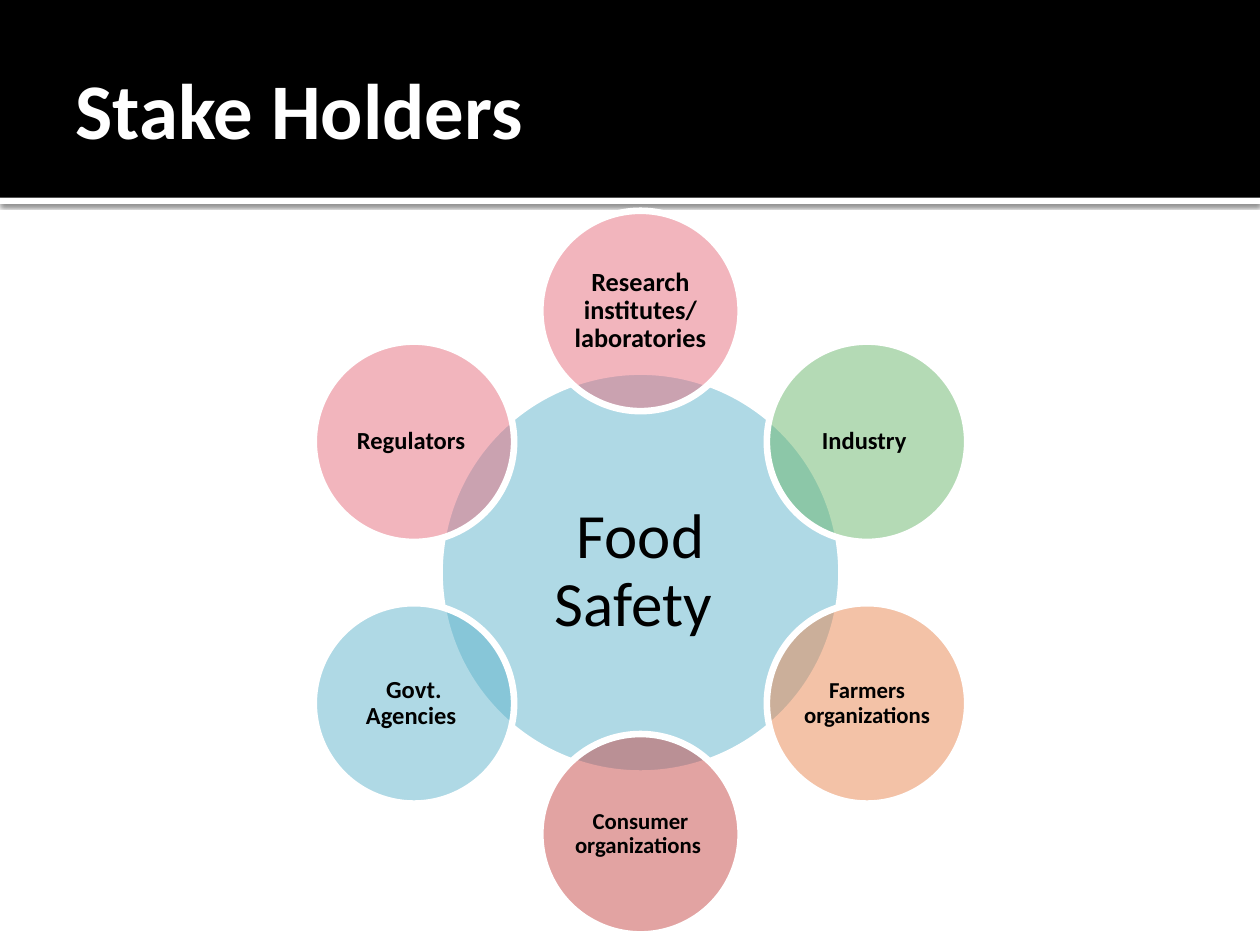
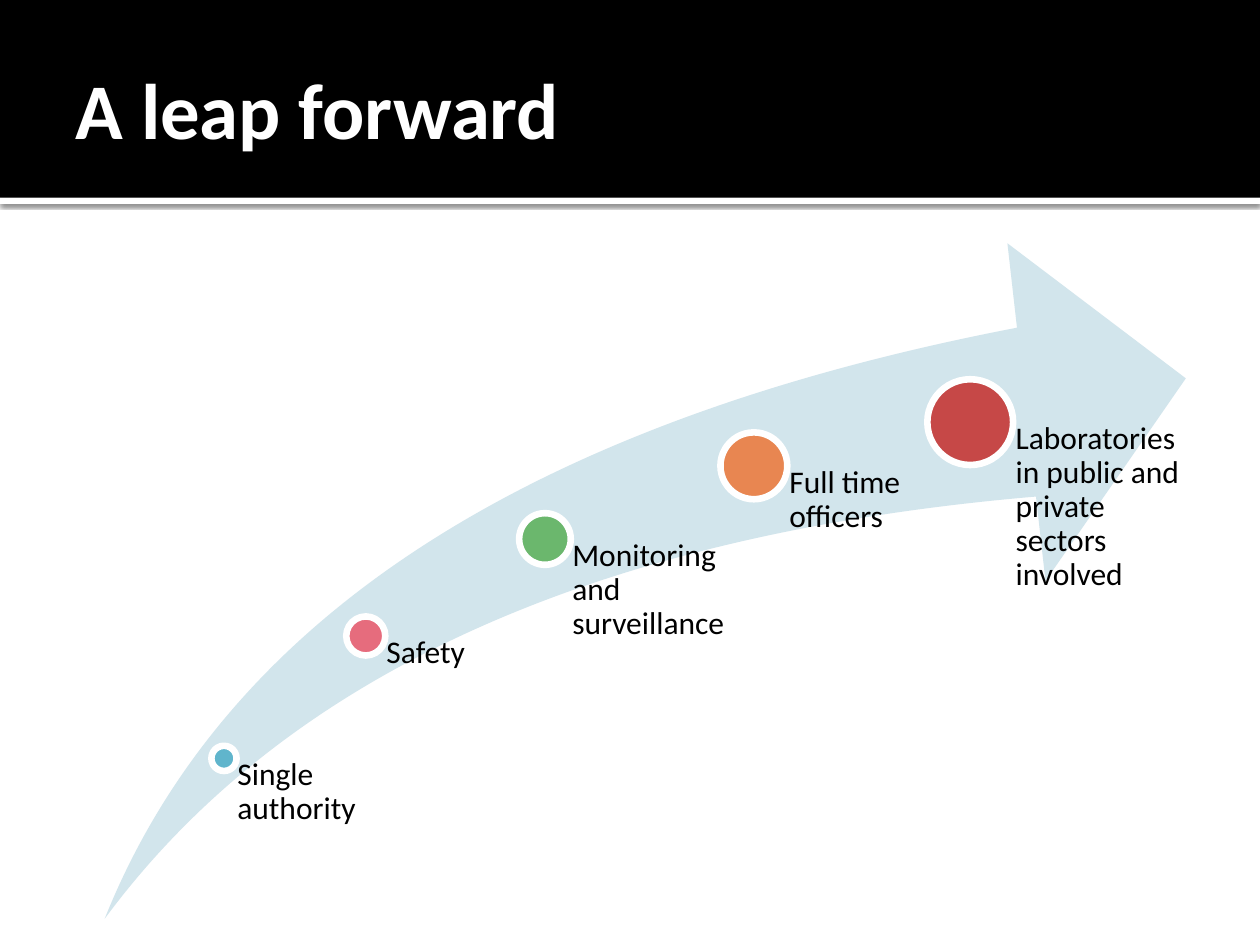
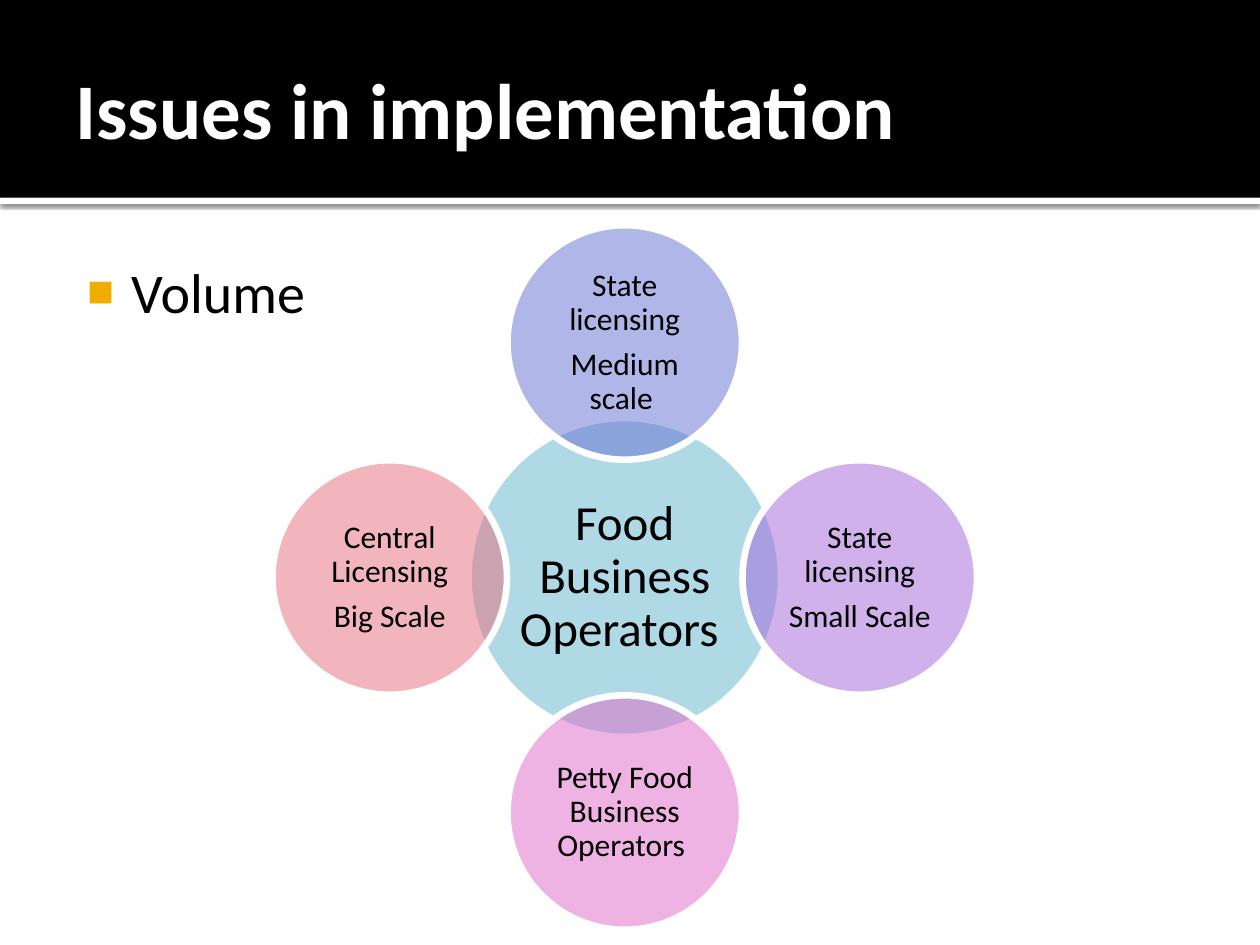
from dataclasses import dataclass
from math import cos, pi, sin

from lxml import etree
from pptx import Presentation
from pptx.dml.color import RGBColor
from pptx.enum.shapes import MSO_SHAPE
from pptx.enum.text import MSO_ANCHOR, MSO_AUTO_SIZE, PP_ALIGN
from pptx.oxml import parse_xml
from pptx.oxml.ns import nsdecls, qn
from pptx.util import Pt

RECTANGLE = MSO_SHAPE.RECTANGLE
ELLIPSE = MSO_SHAPE.OVAL
SWOOSH = MSO_SHAPE.SWOOSH_ARROW
TOP, MIDDLE = MSO_ANCHOR.TOP, MSO_ANCHOR.MIDDLE
LEFT, CENTER = PP_ALIGN.LEFT, PP_ALIGN.CENTER
NO_AUTOFIT = MSO_AUTO_SIZE.NONE
TITLE_AND_BODY, TITLE_ONLY = 1, 5


@dataclass(frozen=True)
class Theme:
    font: str = "Calibri"
    black: str = "000000"
    white: str = "FFFFFF"
    gold: str = "F0AD00"
    pale_blue: str = "D2E5EC"
    blue: str = "60B5CC"
    pink: str = "E66C7D"
    green: str = "6BB76D"
    orange: str = "E88651"
    red: str = "C64847"
    indigo: str = "6270D3"
    purple: str = "A465DA"
    magenta: str = "E068C8"
    title_size: float = 45
    body_size: float = 32
    label_size: float = 18
    outline: float = 3.78
    line_spacing: float = 0.9
    space_after: float = 0.35  # share of the type size


THEME = Theme()


# Formatting helpers
def apply_format(target, values):
    for name, value in values.items():
        setattr(target, name, value)


def place(shape, left, top, width, height):
    apply_format(shape, {"left": Pt(left), "top": Pt(top),
                         "width": Pt(width), "height": Pt(height)})


def set_frame(frame, anchor, insets):
    left, top, right, bottom = map(Pt, insets)
    apply_format(frame, {
        "word_wrap": True, "auto_size": NO_AUTOFIT, "vertical_anchor": anchor,
        "margin_left": left, "margin_top": top,
        "margin_right": right, "margin_bottom": bottom})


def write_text(frame, text, size, color=THEME.black, bold=False, **paragraph_format):
    frame.text = text
    for paragraph in frame.paragraphs:
        apply_format(paragraph, paragraph_format)
        for run in paragraph.runs:
            apply_format(run.font, {"name": THEME.font, "size": Pt(size), "bold": bold})
            run.font.color.rgb = RGBColor.from_string(color)


def write_label(frame, text, size, alignment, bold=False):
    write_text(frame, text, size, bold=bold, alignment=alignment,
               line_spacing=THEME.line_spacing,
               space_after=Pt(size * THEME.space_after))


# Elements
def add_filled(slide, kind, left, top, width, height, color):
    shape = slide.shapes.add_shape(kind, Pt(left), Pt(top), Pt(width), Pt(height))
    shape.shadow.inherit = False
    shape.fill.solid()
    shape.fill.fore_color.rgb = RGBColor.from_string(color)
    shape.line.fill.background()
    return shape


def add_circle(slide, center_x, center_y, width, height, color, opacity=100):
    circle = add_filled(slide, ELLIPSE, center_x - width / 2, center_y - height / 2,
                        width, height, color)
    circle.line.color.rgb = RGBColor.from_string(THEME.white)
    circle.line.width = Pt(THEME.outline)
    if opacity < 100:
        fill_color = circle.element.spPr.xpath("./a:solidFill/a:srgbClr")[0]
        etree.SubElement(fill_color, qn("a:alpha"), val=str(opacity * 1000))
    return circle


def add_labelled_circle(slide, center_x, center_y, width, height, color, text, size,
                        inset, bold=False):
    circle = add_circle(slide, center_x, center_y, width, height, color, opacity=50)
    set_frame(circle.text_frame, MIDDLE, [inset] * 4)
    write_label(circle.text_frame, text, size, CENTER, bold)


def add_wheel(slide, center, orbit, hub, satellite_size, satellites, inset, bold=False):
    """Draw a hub and satellites spread clockwise from the top."""
    center_x, center_y = center
    width, height, text, size = hub
    add_labelled_circle(slide, center_x, center_y, width, height, THEME.blue, text, size,
                        size / 10)
    for index, (text, size, color) in enumerate(satellites):
        angle = 2 * pi * index / len(satellites)
        add_labelled_circle(slide, center_x + orbit * sin(angle),
                            center_y - orbit * cos(angle), satellite_size,
                            satellite_size, color, text, size, inset, bold)


def add_milestone(slide, center_x, center_y, diameter, label_width, bottom, color, text):
    add_circle(slide, center_x, center_y, diameter, diameter, color)
    label = slide.shapes.add_textbox(Pt(center_x), Pt(center_y), Pt(label_width),
                                     Pt(bottom - center_y))
    set_frame(label.text_frame, TOP, (diameter * 0.53, 0, 0, 0))
    write_label(label.text_frame, text, THEME.label_size, LEFT)


def add_bullets(slide, text):
    body = slide.placeholders[1]
    place(body, 36, 139.7, 648, 364.3)
    set_frame(body.text_frame, TOP, (4.3, 7.2, 7.2, 3.6))
    write_text(body.text_frame, text, THEME.body_size, alignment=LEFT,
               space_before=Pt(0), space_after=Pt(18))
    for paragraph in body.text_frame.paragraphs:
        properties = paragraph._p.get_or_add_pPr()
        properties.set("marL", str(Pt(34.6)))
        properties.set("indent", str(Pt(-25.2)))
        color = etree.SubElement(properties, qn("a:buClr"))
        etree.SubElement(color, qn("a:srgbClr"), val=THEME.gold)
        etree.SubElement(properties, qn("a:buSzPct"), val="80000")
        etree.SubElement(properties, qn("a:buChar"), char="■")


# Shared parts
def add_master_band(presentation, slide):
    """Build the header band and move it behind everything on the master."""
    stripe = add_filled(slide, RECTANGLE, 0, 113, 720, 3.6, THEME.white)
    properties = stripe.element.spPr
    properties.remove(properties.find(qn("a:effectLst")))
    properties.append(parse_xml(
        f'<a:effectLst {nsdecls("a")}>'
        f'<a:outerShdw blurRad="{Pt(2.5)}" dist="{Pt(0.8)}" dir="5400000" rotWithShape="0">'
        f'<a:srgbClr val="{THEME.black}"><a:alpha val="60000"/></a:srgbClr>'
        '</a:outerShdw></a:effectLst>'))
    band = add_filled(slide, RECTANGLE, 0, 0, 720, 113, THEME.black)
    master_tree = presentation.slide_master.shapes.element
    for index, shape in enumerate((stripe, band)):
        shape.element.nvSpPr.cNvPr.set("id", str(100 + index))
        master_tree.insert(2 + index, shape.element)


def add_titled_slide(presentation, title_text, layout=TITLE_ONLY):
    slide = presentation.slides.add_slide(presentation.slide_layouts[layout])
    title = slide.shapes.title
    place(title, 36, 12.2, 648, 98.6)
    set_frame(title.text_frame, MIDDLE, (7.2, 3.6, 3.6, 3.6))
    write_text(title.text_frame, title_text, THEME.title_size, THEME.white, bold=True,
               alignment=LEFT)
    return slide


# Slides
def add_stakeholders(presentation):
    slide = add_titled_slide(presentation, "Stake Holders")
    add_master_band(presentation, slide)
    satellites = [
        ("Research institutes/ laboratories ", 15, THEME.pink),
        ("Industry ", 14, THEME.green),
        ("Farmers organizations", 13, THEME.orange),
        ("Consumer organizations ", 13, THEME.red),
        ("Govt. Agencies ", 14, THEME.blue),
        ("Regulators ", 14, THEME.pink),
    ]
    add_wheel(slide, (366, 327.2), 149.5, (229.7, 229.7, "Food Safety ", 36),
              114.5, satellites, inset=1.5, bold=True)


def add_leap_forward(presentation):
    slide = add_titled_slide(presentation, "A leap forward")
    arrow = add_filled(slide, SWOOSH, 59.8, 139, 617.8, 386, THEME.pale_blue)
    for index in range(2):
        arrow.adjustments[index] = 0.25
    milestones = [
        (128, 433.4, 14.4, 80.6, THEME.blue, "Single authority"),
        (209, 363.4, 22.3, 102.2, THEME.pink, "Safety"),
        (311.4, 308, 29.5, 119.5, THEME.green, "Monitoring and surveillance"),
        (430.8, 266.2, 38.2, 123.8, THEME.orange, "Full time officers"),
        (554.4, 241.2, 49, 123.8, THEME.red,
         "Laboratories in public and private sectors involved"),
    ]
    for center_x, center_y, diameter, label_width, color, text in milestones:
        add_milestone(slide, center_x, center_y, diameter, label_width, 525, color, text)


def add_issues(presentation):
    slide = add_titled_slide(presentation, "Issues in implementation", TITLE_AND_BODY)
    add_bullets(slide, "Volume")
    satellites = [
        ("State licensing\nMedium scale ", THEME.label_size, THEME.indigo),
        ("State licensing\nSmall Scale", THEME.label_size, THEME.purple),
        ("Petty Food Business Operators ", THEME.label_size, THEME.magenta),
        ("Central Licensing\nBig Scale", THEME.label_size, THEME.pink),
    ]
    add_wheel(slide, (357, 330), 134.3, (178.6, 182.2, "Food Business Operators ", 28),
              134, satellites, inset=1.8)


def main():
    presentation = Presentation()
    presentation.slide_width, presentation.slide_height = Pt(720), Pt(540)
    add_stakeholders(presentation)
    add_leap_forward(presentation)
    add_issues(presentation)
    presentation.save("out.pptx")


if __name__ == "__main__":
    main()
